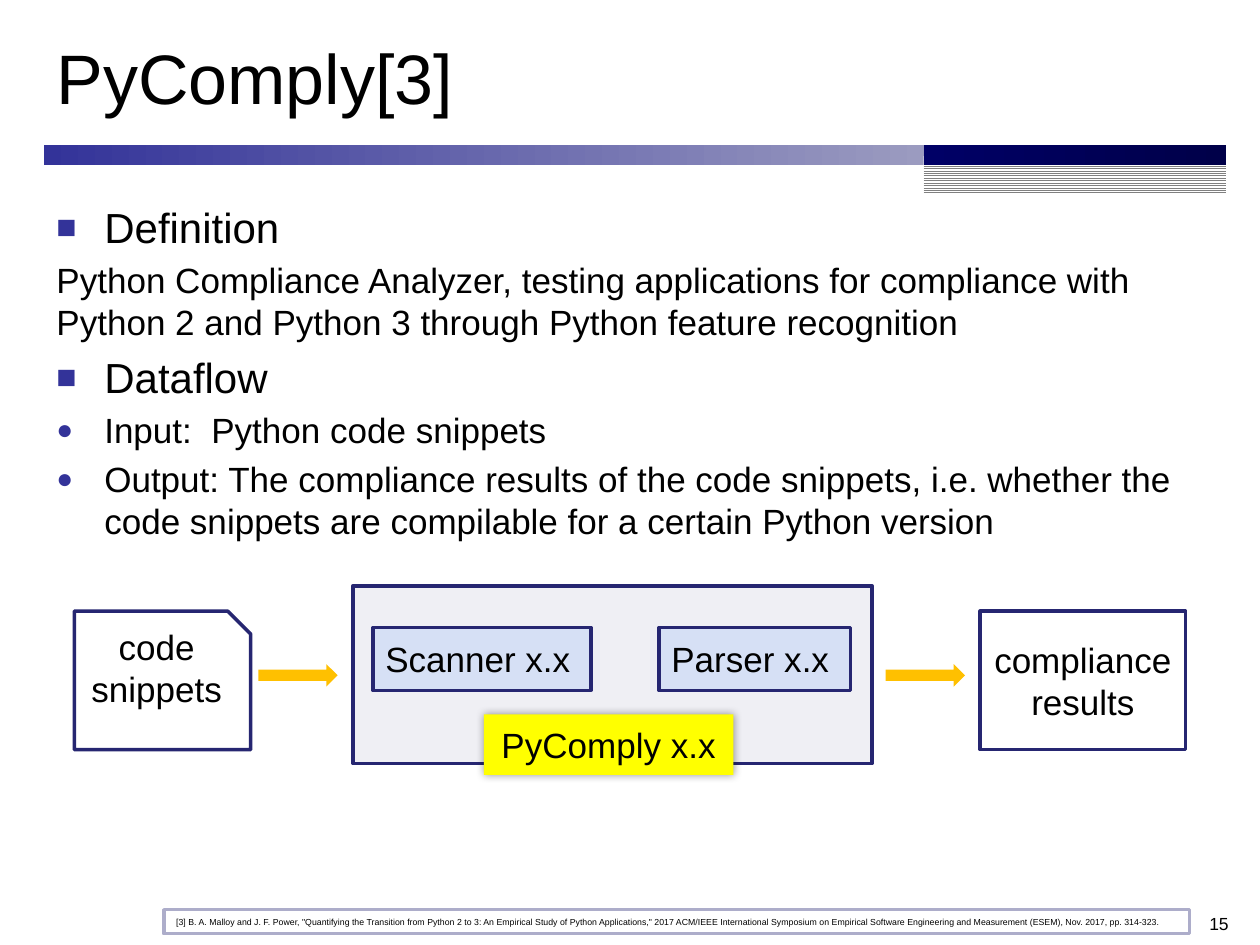
"""Build the PyComply slide with its definition, dataflow notes and pipeline diagram."""
import dataclasses
import typing

import lxml.etree
import pptx
import pptx.dml.color
import pptx.enum.dml
import pptx.enum.shapes
import pptx.enum.text
import pptx.oxml.ns
import pptx.util

Inches = pptx.util.Inches
Pt = pptx.util.Pt
Geometry = pptx.enum.shapes.MSO_SHAPE
Align = pptx.enum.text.PP_ALIGN
Anchor = pptx.enum.text.MSO_ANCHOR


@dataclasses.dataclass(frozen=True)
class Theme:
    font: str = "Arial"
    ink: str = "000000"
    paper: str = "FFFFFF"
    bullet: str = "333399"
    outline: str = "262671"
    panel: str = "EFEFF4"
    stage: str = "D6E0F5"
    highlight: str = "FFFF00"
    arrow: str = "FFC000"
    citation_line: str = "ADADCA"
    stripe: str = "808080"
    long_bar: tuple[str, str] = ("333399", "9B9BC0")
    short_bar: tuple[str, str] = ("000066", "000049")
    title_size: float = 40
    heading_size: float = 24
    body_size: float = 20
    number_size: float = 10
    citation_size: float = 5
    line_width: float = 2


THEME = Theme()


class Area(typing.NamedTuple):
    left: float
    top: float
    width: float
    height: float


@dataclasses.dataclass(frozen=True)
class Box:
    area: Area
    label: str = ""
    fill: str | None = None
    line: str | None = THEME.outline
    geometry: Geometry = Geometry.RECTANGLE
    size: float = THEME.body_size
    align: Align = Align.CENTER
    anchor: Anchor = Anchor.MIDDLE
    top_inset: float = 0.05
    glow: bool = False


class Point(typing.NamedTuple):
    wording: str
    size: float = THEME.body_size
    bullet: str | None = None


LONG_BAR = Area(0.35, 1.15, 6.98, 0.16)
SHORT_BAR = Area(7.33, 1.15, 2.4, 0.16)
STRIPES = Area(7.33, 1.24, 2.4, 0.3)

POINTS = [
    Point("Definition", THEME.heading_size, "■"),
    Point("Python Compliance Analyzer, testing applications for compliance with "
          "Python 2 and Python 3 through Python feature recognition"),
    Point("Dataflow", THEME.heading_size, "■"),
    Point("Input:  Python code snippets", bullet="●"),
    Point("Output: The compliance results of the code snippets, i.e. whether the "
          "code snippets are compilable for a certain Python version", bullet="●"),
]

CITATION = (
    '[3] B. A. Malloy and J. F. Power, "Quantifying the Transition from Python 2 to 3: '
    'An Empirical Study of Python Applications," 2017 ACM/IEEE International Symposium on '
    "Empirical Software Engineering and Measurement (ESEM), Nov. 2017, pp. 314-323."
)

BOXES = [
    Box(Area(2.8, 4.65, 4.12, 1.41), fill=THEME.panel),
    Box(Area(2.96, 4.98, 1.73, 0.5), "Scanner x.x", THEME.stage, align=Align.LEFT),
    Box(Area(5.23, 4.98, 1.52, 0.5), "Parser x.x", THEME.stage, align=Align.LEFT),
    Box(Area(3.84, 5.67, 1.98, 0.48), "PyComply x.x", THEME.highlight, None, glow=True),
    Box(Area(0.59, 4.85, 1.4, 1.1), "code snippets", THEME.paper,
        geometry=Geometry.SNIP_1_RECTANGLE, anchor=Anchor.TOP, top_inset=0.02),
    *(Box(Area(left, 5.27, 0.63, 0.18), fill=THEME.arrow, line=None,
          geometry=Geometry.RIGHT_ARROW) for left in (2.05, 7.03)),
    Box(Area(7.78, 4.85, 1.63, 1.1), "compliance results"),
    Box(Area(1.3, 7.22, 8.14, 0.19), CITATION, THEME.paper, THEME.citation_line,
        size=THEME.citation_size, align=Align.LEFT),
]


def rgb(value: str) -> pptx.dml.color.RGBColor:
    return pptx.dml.color.RGBColor.from_string(value)


def add_xml(parent, tag: str, **attributes: str):
    return lxml.etree.SubElement(parent, pptx.oxml.ns.qn(tag), attributes)


def write(paragraph, wording: str, *, size: float = THEME.body_size,
          align: Align = Align.LEFT, before: float = 0, bullet: str | None = None) -> None:
    paragraph.alignment = align
    paragraph.space_before = Pt(before)
    run = paragraph.add_run()
    run.text = wording
    run.font.name = THEME.font
    run.font.size = Pt(size)
    run.font.color.rgb = rgb(THEME.ink)
    if bullet:
        properties = paragraph._p.get_or_add_pPr()
        properties.set("marL", str(Inches(0.38)))
        properties.set("indent", str(Inches(-0.38)))
        add_xml(add_xml(properties, "a:buClr"), "a:srgbClr", val=THEME.bullet)
        add_xml(properties, "a:buSzPct", val="80000")
        add_xml(properties, "a:buFont", typeface=THEME.font)
        add_xml(properties, "a:buChar", char=bullet)


def add_plain_shape(slide, area: Area, geometry: Geometry = Geometry.RECTANGLE):
    shape = slide.shapes.add_shape(geometry, *map(Inches, area))
    shape.shadow.inherit = False
    shape.line.fill.background()
    return shape


def add_gradient_bar(slide, area: Area, colours: tuple[str, str]) -> None:
    bar = add_plain_shape(slide, area)
    bar.fill.gradient()
    bar.fill.gradient_angle = 0
    for stop, colour in zip(bar.fill.gradient_stops, colours):
        stop.color.rgb = rgb(colour)


def add_stripes(slide, area: Area) -> None:
    stripes = add_plain_shape(slide, area)
    stripes.fill.patterned()
    stripes.fill.pattern = pptx.enum.dml.MSO_PATTERN.LIGHT_HORIZONTAL
    stripes.fill.fore_color.rgb = rgb(THEME.stripe)
    stripes.fill.back_color.rgb = rgb(THEME.paper)


def add_box(slide, box: Box) -> None:
    shape = add_plain_shape(slide, box.area, box.geometry)
    if box.fill:
        shape.fill.solid()
        shape.fill.fore_color.rgb = rgb(box.fill)
    else:
        shape.fill.background()
    if box.line:
        shape.line.color.rgb = rgb(box.line)
        shape.line.width = Pt(THEME.line_width)
    if box.glow:
        effects = shape._element.spPr.find(pptx.oxml.ns.qn("a:effectLst"))
        shadow = add_xml(effects, "a:outerShdw", blurRad=str(Pt(5)), dist="0", dir="0")
        add_xml(add_xml(shadow, "a:srgbClr", val=THEME.ink), "a:alpha", val="40000")
    if box.label:
        frame = shape.text_frame
        frame.word_wrap = True
        frame.vertical_anchor = box.anchor
        frame.margin_top = Inches(box.top_inset)
        write(frame.paragraphs[0], box.label, size=box.size, align=box.align)


def add_text(slide, area: Area, anchor: Anchor = Anchor.TOP):
    frame = slide.shapes.add_textbox(*map(Inches, area)).text_frame
    frame.word_wrap = True
    frame.vertical_anchor = anchor
    return frame


def main() -> None:
    deck = pptx.Presentation()
    deck.slide_width, deck.slide_height = Inches(10), Inches(7.5)
    slide = deck.slides.add_slide(deck.slide_layouts[6])
    add_gradient_bar(slide, LONG_BAR, THEME.long_bar)
    add_stripes(slide, STRIPES)
    add_gradient_bar(slide, SHORT_BAR, THEME.short_bar)
    title = add_text(slide, Area(0.35, 0.13, 9.38, 0.95), Anchor.MIDDLE)
    write(title.paragraphs[0], "PyComply[3]", size=THEME.title_size)
    body = add_text(slide, Area(0.35, 1.55, 9.37, 5.28))
    for index, point in enumerate(POINTS):
        paragraph = body.add_paragraph() if index else body.paragraphs[0]
        write(paragraph, point.wording, size=point.size, before=point.size * 0.2,
              bullet=point.bullet)
    number = add_text(slide, Area(9.25, 7.2, 0.6, 0.3))
    write(number.paragraphs[0], "15", size=THEME.number_size, align=Align.RIGHT)
    for box in BOXES:
        add_box(slide, box)
    deck.save("out.pptx")


if __name__ == "__main__":
    main()
